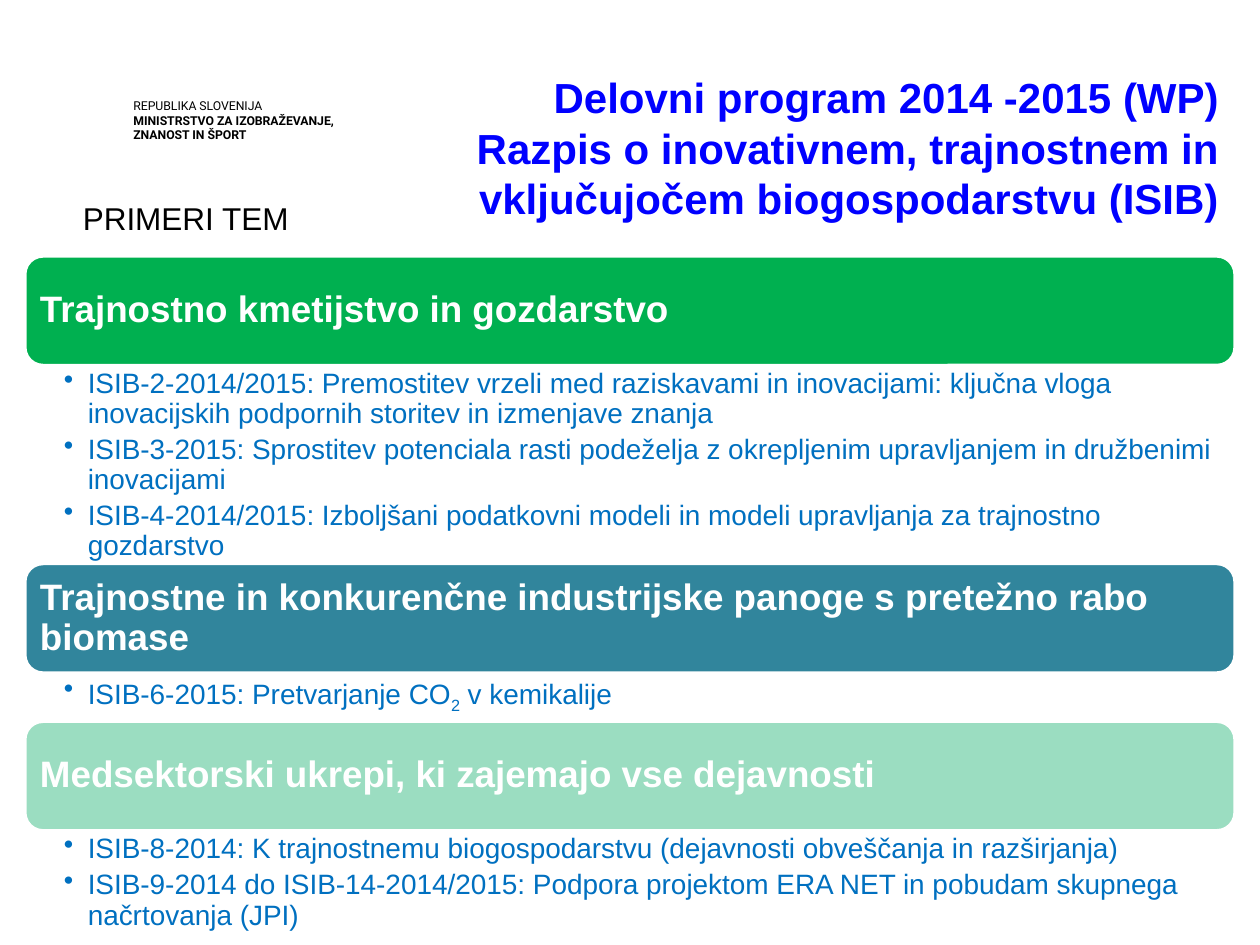
from lxml.etree import SubElement as Sub
from pptx import Presentation
from pptx.dml.color import RGBColor as Rgb
from pptx.enum.shapes import MSO_SHAPE as Kind
from pptx.enum.text import MSO_ANCHOR as Anchor, PP_ALIGN as Align
from pptx.oxml.ns import qn
from pptx.util import Cm, Pt


def color(code):
    return Rgb.from_string(code)


def write(para, text, size, code, bold=False, font="Arial"):
    run = para.add_run()
    run.text = text
    run.font.name = font
    run.font.size = Pt(size)
    run.font.bold = bold
    run.font.color.rgb = color(code)
    return run


deck = Presentation()
deck.slide_width, deck.slide_height = Cm(25.4), Cm(19.05)
slide = deck.slides.add_slide(deck.slide_layouts[6])
shapes = slide.shapes

office = shapes.add_textbox(Cm(2.69), Cm(1.98), Cm(6.45), Cm(0.86)).text_frame
office.word_wrap = True
office.margin_left = office.margin_right = 0
office.margin_top = office.margin_bottom = 0
names = ["REPUBLIKA SLOVENIJA", "MINISTRSTVO ZA IZOBRAŽEVANJE,", "ZNANOST IN ŠPORT"]
for i, name in enumerate(names):
    para = office.add_paragraph() if i else office.paragraphs[0]
    para.line_spacing = Pt(8.4)
    write(para, name, 7, "000000", i > 0, "Roboto")

title = shapes.add_textbox(Cm(6.76), Cm(1.32), Cm(18.06), Cm(3.33)).text_frame
title.word_wrap = True
lines = [
    "Delovni program 2014 -2015 (WP)",
    "Razpis o inovativnem, trajnostnem in vključujočem biogospodarstvu (ISIB)",
]
for i, line in enumerate(lines):
    para = title.add_paragraph() if i else title.paragraphs[0]
    para.alignment = Align.RIGHT
    write(para, line, 24, "0000FF", True)

label = shapes.add_textbox(Cm(1.42), Cm(3.89), Cm(10.06), Cm(1.02)).text_frame
label.word_wrap = True
write(label.paragraphs[0], "PRIMERI TEM", 18, "000000")

themes = [
    ("Trajnostno kmetijstvo in gozdarstvo", "00B050", 3.99, [
        ["ISIB-2-2014/2015: Premostitev vrzeli med raziskavami in inovacijami: "
         "ključna vloga inovacijskih podpornih storitev in izmenjave znanja"],
        ["ISIB-3-2015: Sprostitev potenciala rasti podeželja z okrepljenim "
         "upravljanjem in družbenimi inovacijami"],
        ["ISIB-4-2014/2015: Izboljšani podatkovni modeli in modeli upravljanja "
         "za trajnostno gozdarstvo"],
    ]),
    ("Trajnostne in konkurenčne industrijske panoge s pretežno rabo biomase",
     "31859C", 0.97, [
         ["ISIB-6-2015: Pretvarjanje CO", "2", " v kemikalije"],
     ]),
    ("Medsektorski ukrepi, ki zajemajo vse dejavnosti", "9BDDC1", 2.06, [
        ["ISIB-8-2014: K trajnostnemu biogospodarstvu "
         "(dejavnosti obveščanja in razširjanja)"],
        ["ISIB-9-2014 do ISIB-14-2014/2015: Podpora projektom ERA NET "
         "in pobudam skupnega načrtovanja (JPI)"],
    ]),
]
left, width, bar = Cm(0.5), Cm(24.4), 2.21
top = 5.16
for head, fill, tall, topics in themes:
    band = shapes.add_shape(Kind.ROUNDED_RECTANGLE, left, Cm(top), width, Cm(bar))
    band.shadow.inherit = False
    band.fill.solid()
    band.fill.fore_color.rgb = color(fill)
    band.line.color.rgb = color("FFFFFF")
    band.line.width = Pt(2)
    frame = band.text_frame
    frame.word_wrap = True
    frame.vertical_anchor = Anchor.MIDDLE
    frame.margin_left = frame.margin_right = Cm(0.2)
    para = frame.paragraphs[0]
    para.alignment = Align.LEFT
    para.line_spacing = 0.9
    write(para, head, 21, "FFFFFF", True)
    top += bar

    frame = shapes.add_textbox(left, Cm(top), width, Cm(tall)).text_frame
    frame.word_wrap = True
    frame.margin_left, frame.margin_right = Cm(0.79), Cm(0.41)
    frame.margin_top = frame.margin_bottom = Cm(0.08)
    for i, parts in enumerate(topics):
        para = frame.add_paragraph() if i else frame.paragraphs[0]
        para.level = 1
        props = para._p.get_or_add_pPr()
        props.set("marL", str(Cm(0.48)))
        props.set("indent", str(-Cm(0.48)))
        Sub(props, qn("a:buChar")).set("char", "•")
        para.line_spacing = 0.9
        para.space_after = Pt(3.2)
        for part in parts:
            run = write(para, part, 16, "0070C0")
            if part == "2":
                run._r.get_or_add_rPr().set("baseline", "-25000")
    top += tall

deck.save("out.pptx")
